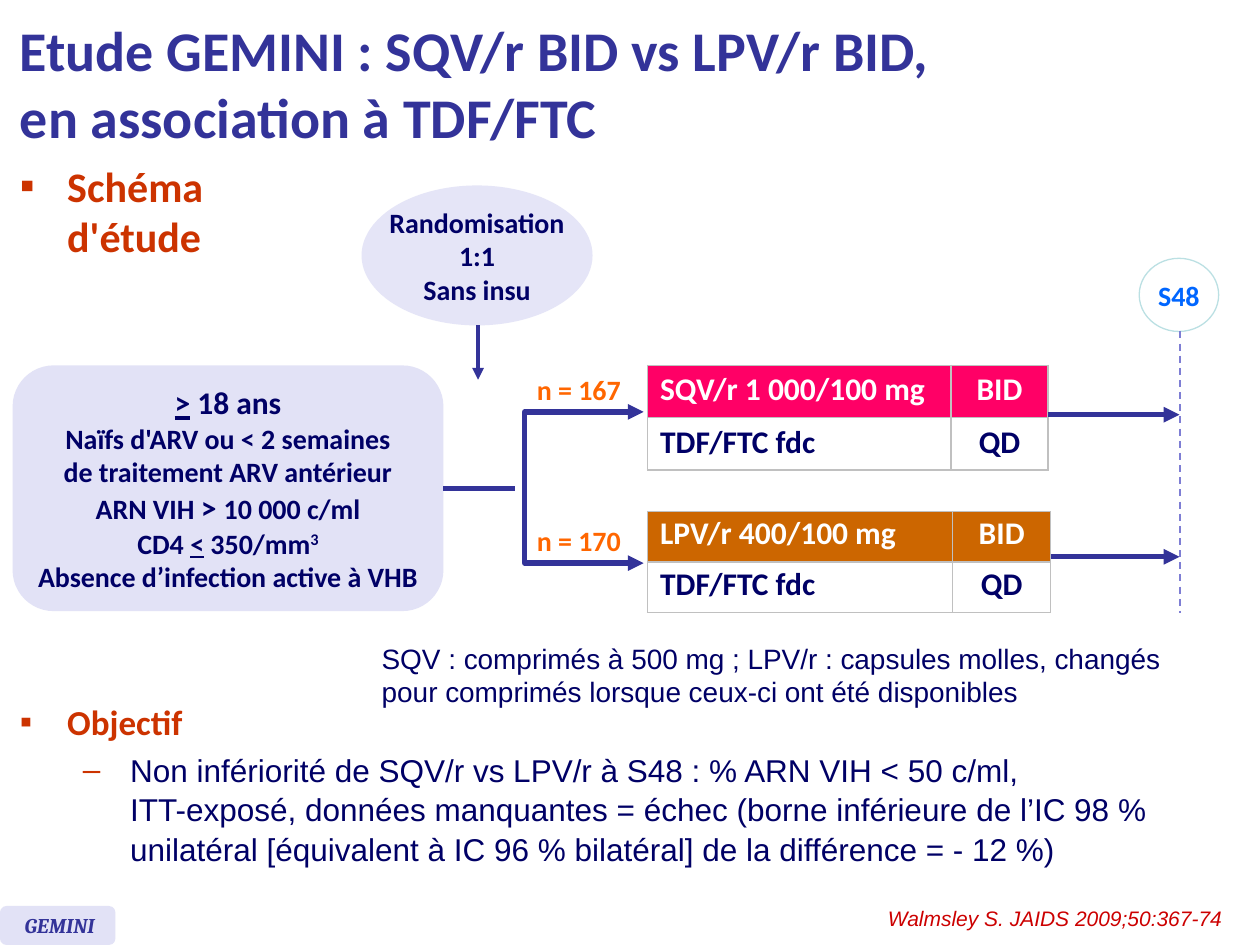
import pptx
import pptx.util
import pptx.dml.color
import pptx.enum.dml
import pptx.enum.shapes
import pptx.enum.text
import pptx.oxml
import pptx.oxml.ns
from lxml import etree

Pt = pptx.util.Pt
ALIGN = pptx.enum.text.PP_ALIGN
ANCHOR = pptx.enum.text.MSO_ANCHOR
SHAPE = pptx.enum.shapes.MSO_SHAPE
INDIGO, NAVY, RED, ORANGE, WHITE = "333399", "000066", "CC3300", "FF6600", "FFFFFF"
LAVENDER = "E2E2F6"


def color(value):
    """Turn a hex string into a colour."""
    return pptx.dml.color.RGBColor.from_string(value)


def add_element(parent, tag, **attributes):
    """Append a DrawingML element to a parent."""
    child = etree.SubElement(parent, pptx.oxml.ns.qn(tag))
    for name, value in attributes.items():
        child.set(name, str(value))
    return child


def set_font(font, size, value, name="Calibri", bold=True, italic=None):
    """Set the look of a font."""
    font.name, font.size, font.bold, font.italic = name, Pt(size), bold, italic
    font.color.rgb = color(value)


def fill_paragraph(paragraph, content, size, value, align=ALIGN.LEFT, **style):
    """Write a string, or a list of (text, overrides) runs, in one paragraph."""
    paragraph.alignment = align
    set_font(paragraph.font, size, value, **style)
    if isinstance(content, str):
        paragraph.text = content
        return
    for text, overrides in content:
        run = paragraph.add_run()
        run.text = text
        if "size" in overrides:
            run.font.size = Pt(overrides["size"])
        if "underline" in overrides:
            run.font.underline = True
        if "baseline" in overrides:
            run._r.get_or_add_rPr().set("baseline", str(overrides["baseline"]))


def fill_frame(frame, contents, size, value, anchor=ANCHOR.TOP, wrap=True, **style):
    """Write one paragraph for each item of contents."""
    frame.word_wrap, frame.vertical_anchor = wrap, anchor
    for index, content in enumerate(contents):
        paragraph = frame.add_paragraph() if index else frame.paragraphs[0]
        fill_paragraph(paragraph, content, size, value, **style)


def add_text(slide, box, contents, size, value, **style):
    """Add a text box."""
    shape = slide.shapes.add_textbox(*map(Pt, box))
    fill_frame(shape.text_frame, contents, size, value, **style)


def add_shape(slide, kind, box, fill, line=None):
    """Add a filled preset shape without shadow."""
    shape = slide.shapes.add_shape(kind, *map(Pt, box))
    shape.shadow.inherit = False
    shape.fill.solid()
    shape.fill.fore_color.rgb = color(fill)
    if line:
        shape.line.color.rgb = color(line)
        shape.line.width = Pt(0.75)
    else:
        shape.line.fill.background()
    return shape


def add_line(slide, start, end, width=3, value=INDIGO, arrow=True):
    """Add a straight connector, with an arrowhead at its end if wanted."""
    connector = slide.shapes.add_connector(
        pptx.enum.shapes.MSO_CONNECTOR.STRAIGHT, *map(Pt, start + end))
    connector.line.color.rgb = color(value)
    connector.line.width = Pt(width)
    if arrow:
        add_element(connector.line._get_or_add_ln(), "a:tailEnd", type="triangle")
    add_element(connector._element.spPr, "a:effectLst")
    return connector


def add_bullet(paragraph, text, symbol, left, size, value, **style):
    """Fill a paragraph that hangs from a bullet."""
    properties = paragraph._p.get_or_add_pPr()
    properties.set("marL", str(Pt(left)))
    properties.set("indent", str(-Pt(27)))
    add_element(add_element(properties, "a:buClr"), "a:srgbClr", val=RED)
    add_element(properties, "a:buFont", typeface="Arial")
    add_element(properties, "a:buChar", char=symbol)
    fill_paragraph(paragraph, text, size, value, **style)


def add_section(slide, box, heading, size, detail=None):
    """Add a bulleted heading with an optional detail below it."""
    frame = slide.shapes.add_textbox(*map(Pt, box)).text_frame
    frame.word_wrap = True
    add_bullet(frame.paragraphs[0], heading, "▪", 27, size, RED)
    if detail:
        paragraph = frame.add_paragraph()
        paragraph.level = 1
        add_bullet(paragraph, detail, "–", 63, 18, NAVY, name="Arial", bold=False)
        paragraph.space_before = Pt(3.6)
        paragraph.line_spacing = 1.05


def add_randomisation(slide, box):
    """Add the randomisation ellipse and the arrow below it."""
    left, top, width, height = box
    shape = add_shape(slide, SHAPE.OVAL, box, "E5E5F7")
    fill_frame(shape.text_frame, ["Randomisation", "1:1", "Sans insu"], 16, NAVY,
               anchor=ANCHOR.MIDDLE, wrap=False, align=ALIGN.CENTER)
    middle, bottom = left + width / 2 + 0.6, top + height
    add_line(slide, (middle, bottom), (middle, bottom + 31), 2.25)


def add_cohort(slide, box):
    """Add the inclusion criteria and the line that leaves them."""
    left, top, width, height = box
    shape = add_shape(slide, SHAPE.ROUNDED_RECTANGLE, box, LAVENDER)
    criteria = [
        [(">", {"underline": True, "size": 18}), (" 18 ans", {"size": 18})],
        "Naïfs d'ARV ou < 2 semaines",
        "de traitement ARV antérieur",
        [("ARN VIH ", {}), ("> ", {"size": 18}), ("10 000 c/ml", {})],
        [("CD4 ", {}), ("<", {"underline": True}), (" 350/mm", {}), ("3", {"baseline": 30000})],
        "Absence d’infection active à VHB",
    ]
    fill_frame(shape.text_frame, criteria, 16, NAVY, anchor=ANCHOR.MIDDLE, align=ALIGN.CENTER)
    right, middle = left + width, top + height / 2
    add_line(slide, (right, middle), (right + 41, middle), arrow=False).begin_connect(shape, 3)


def add_fork(slide, box):
    """Add the bracket whose two arrows lead to the arms."""
    left, top, width, height = box
    builder = slide.shapes.build_freeform(Pt(left + width), Pt(top))
    corners = [(left, top), (left, top + height), (left + width, top + height)]
    builder.add_line_segments([(Pt(x), Pt(y)) for x, y in corners], close=False)
    shape = builder.convert_to_shape()
    shape.shadow.inherit = False
    shape.fill.background()
    shape.line.color.rgb = color(INDIGO)
    shape.line.width = Pt(3)
    for tag in ("a:headEnd", "a:tailEnd"):
        add_element(shape.line._get_or_add_ln(), tag, type="triangle")


def add_borders(cell):
    """Draw grey borders on the four sides of a cell."""
    for tag in ("a:lnL", "a:lnR", "a:lnT", "a:lnB"):
        border = add_element(cell._tc.get_or_add_tcPr(), tag, w=Pt(1))
        add_element(add_element(border, "a:solidFill"), "a:srgbClr", val="C0C0C0")


def add_arm(slide, box, drug, fill, count, spacing, entry, departure, finish):
    """Add one treatment arm: its size, its table and its arrow to week 48."""
    left, top, width, height = box
    add_text(slide, (left - 70.5, entry - 26, 62.6, 26.6), [count], 16, ORANGE,
             wrap=False, align=ALIGN.CENTER)
    table = slide.shapes.add_table(2, 2, *map(Pt, box)).table
    table.first_row = table.horz_banding = False
    for column, share in zip(table.columns, (0.757, 0.243)):
        column.width = Pt(width * share)
    rows = [(drug, "BID"), ("TDF/FTC fdc", "QD")]
    for row, texts in enumerate(rows):
        table.rows[row].height = Pt(height / 2)
        for column, text in enumerate(texts):
            cell = table.cell(row, column)
            add_borders(cell)
            if row:
                cell.fill.background()
            else:
                cell.fill.solid()
                cell.fill.fore_color.rgb = color(fill)
            cell.vertical_anchor = ANCHOR.MIDDLE
            paragraph = cell.text_frame.paragraphs[0]
            fill_paragraph(paragraph, text, 18, NAVY if row else WHITE,
                           align=ALIGN.CENTER if column else ALIGN.LEFT)
            paragraph.line_spacing = spacing
    add_line(slide, (left + width, departure), (finish, departure))


def add_week(slide, box, length):
    """Add the week marker and its dashed line."""
    left, top, width, height = box
    shape = add_shape(slide, SHAPE.OVAL, box, WHITE, "BBE0E3")
    fill_frame(shape.text_frame, ["S48"], 16, "0066FF",
               anchor=ANCHOR.MIDDLE, wrap=False, align=ALIGN.CENTER)
    middle, bottom = left + width / 2 + 0.4, top + height
    line = add_line(slide, (middle, bottom), (middle, bottom + length), 1, "7E7ED4", False)
    line.line.dash_style = pptx.enum.dml.MSO_LINE.DASH


def add_footer(slide, box):
    """Add the study badge and the reference."""
    left, top, width, height = box
    badge = add_shape(slide, SHAPE.ROUNDED_RECTANGLE, (left, top, 66, height), LAVENDER)
    badge.text_frame.margin_left = Pt(13)
    fill_frame(badge.text_frame, ["GEMINI"], 12, INDIGO, anchor=ANCHOR.MIDDLE,
               wrap=False, name="Cambria", italic=True)
    add_text(slide, (left + width - 227, top - 3.6, 216, 21.6),
             ["Walmsley S. JAIDS 2009;50:367-74 "], 12, "CC0000",
             align=ALIGN.RIGHT, name="Arial", bold=False, italic=True)


def main():
    """Build the slide and save it."""
    presentation = pptx.Presentation()
    presentation.slide_width, presentation.slide_height = Pt(720), Pt(540)
    slide = presentation.slides.add_slide(presentation.slide_layouts[6])
    add_text(slide, (4.3, 3.6, 645, 87),
             ["Etude GEMINI : SQV/r BID vs LPV/r BID,\ven association à TDF/FTC"],
             32, INDIGO, anchor=ANCHOR.MIDDLE)
    add_section(slide, (4.3, 88, 142.6, 45), "Schéma d'étude", 24)
    add_randomisation(slide, (206.6, 106, 132, 80))
    add_cohort(slide, (7.2, 208.8, 246.2, 140.4))
    add_fork(slide, (299.8, 235.4, 68, 86.4))
    add_week(slide, (651, 147.6, 45.4, 41.8), 161)
    add_arm(slide, (370, 208.8, 229, 59.8), "SQV/r 1 000/100 mg", "FF0066",
            "n = 167", 0.8, 235.4, 237, 674)
    add_arm(slide, (370, 292.4, 230.4, 57.6), "LPV/r 400/100 mg", "CC6600",
            "n = 170", 0.7, 321.8, 318.2, 674)
    add_text(slide, (211, 362.9, 461.5, 46),
             ["SQV : comprimés à 500 mg ; LPV/r : capsules molles, changés",
              "pour comprimés lorsque ceux-ci ont été disponibles"],
             16, NAVY, wrap=False, name="Arial", bold=False)
    add_section(slide, (4.3, 396.7, 715.7, 113.8), "Objectif", 20,
                "Non infériorité de SQV/r vs LPV/r à S48 : % ARN VIH < 50 c/ml,\v"
                "ITT-exposé, données manquantes = échec (borne inférieure de l’IC 98 % "
                "unilatéral [équivalent à IC 96 % bilatéral] de la différence = - 12 %)")
    add_footer(slide, (0, 517.7, 720, 22.3))
    presentation.save("out.pptx")


if __name__ == "__main__":
    main()
